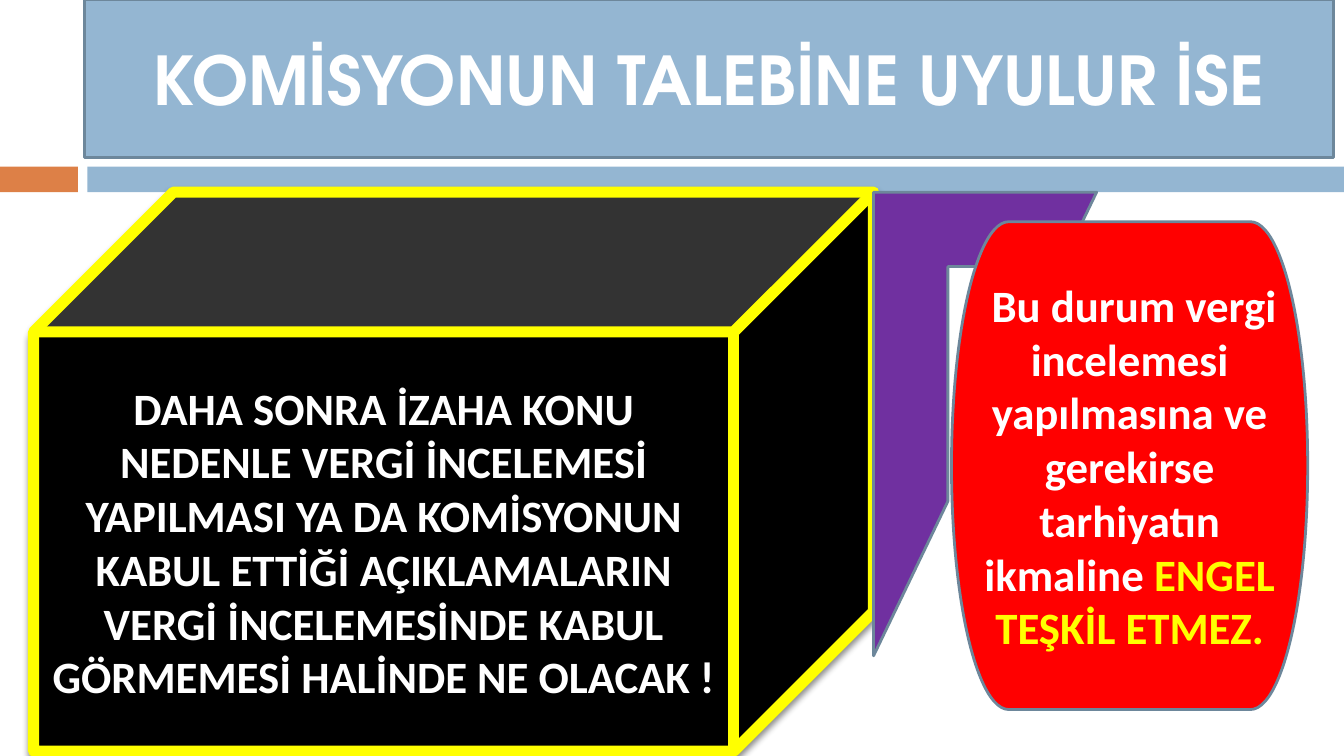
from lxml.etree import SubElement
from pptx import Presentation
from pptx.dml.color import RGBColor
from pptx.enum.shapes import MSO_SHAPE
from pptx.enum.text import MSO_ANCHOR, PP_ALIGN
from pptx.oxml.ns import qn
from pptx.util import Inches, Pt

BLUE, EDGE, WHITE, YELLOW = "94B6D2", "6D879B", "FFFFFF", "FFFF00"


def add_block(kind, left, top, width, height, fill, line=None, line_width=1.5):
    shape = slide.shapes.add_shape(
        kind, Inches(left), Inches(top), Inches(width), Inches(height))
    shape.shadow.inherit = False
    shape.fill.solid()
    shape.fill.fore_color.rgb = RGBColor.from_string(fill)
    if line:
        shape.line.color.rgb = RGBColor.from_string(line)
        shape.line.width = Pt(line_width)
    else:
        shape.line.fill.background()
    return shape


def write_text(shape, runs, font_name, size):
    frame = shape.text_frame
    frame.word_wrap = True
    frame.vertical_anchor = MSO_ANCHOR.MIDDLE
    paragraph = frame.paragraphs[0]
    paragraph.alignment = PP_ALIGN.CENTER
    paragraph.font.name = font_name
    paragraph.font.size = Pt(size)
    paragraph.font.bold = True
    for text, color in runs:
        run = paragraph.add_run()
        run.text = text
        run.font.color.rgb = RGBColor.from_string(color)


# Widescreen slide, 16:9
presentation = Presentation()
presentation.slide_width = Inches(10)
presentation.slide_height = Inches(10) * 9 // 16
slide = presentation.slides.add_slide(presentation.slide_layouts[6])

# Accent band
add_block(MSO_SHAPE.RECTANGLE, 0, 1.24, 0.58, 0.19, "DD8047")
add_block(MSO_SHAPE.RECTANGLE, 0.65, 1.24, 9.35, 0.19, BLUE)

# Title
title = add_block(MSO_SHAPE.RECTANGLE, 0.63, 0, 9.29, 1.17, BLUE, EDGE)
write_text(title, [("KOMİSYONUN TALEBİNE UYULUR İSE", WHITE)],
           "TeX Gyre Adventor", 36)

# Question cube with a soft shadow below
cube = add_block(MSO_SHAPE.CUBE, 0.25, 1.43, 6.25, 4.16, "000000", YELLOW, 6)
write_text(cube, [(
    "DAHA SONRA İZAHA KONU NEDENLE VERGİ İNCELEMESİ YAPILMASI YA DA "
    "KOMİSYONUN KABUL ETTİĞİ AÇIKLAMALARIN VERGİ İNCELEMESİNDE KABUL "
    "GÖRMEMESİ HALİNDE NE OLACAK !", WHITE)], "Calibri", 24)
effects = cube._element.spPr.find(qn("a:effectLst"))
shadow = SubElement(effects, qn("a:outerShdw"), blurRad=str(Pt(3)),
                    dist=str(Pt(2.4)), dir="5400000", rotWithShape="0")
shadow_color = SubElement(shadow, qn("a:srgbClr"), val="000000")
SubElement(shadow_color, qn("a:alpha"), val="45000")

# Corner frame leading to the answer
add_block(MSO_SHAPE.HALF_FRAME, 6.5, 1.43, 1.66, 3.45, "7030A0", EDGE)

# Answer
answer = add_block(MSO_SHAPE.FLOWCHART_TERMINATOR, 7.08, 1.65, 2.65, 3.63,
                   "FF0000", EDGE)
write_text(answer, [
    (" ", WHITE),
    ("Bu durum vergi incelemesi yapılmasına ve gerekirse tarhiyatın ikmaline ",
     WHITE),
    ("ENGEL TEŞKİL ETMEZ.", YELLOW)], "Calibri", 24)
leading_space = answer.text_frame.paragraphs[0].runs[0]
leading_space.font.size = Pt(21)
leading_space.font.bold = False

presentation.save("out.pptx")
